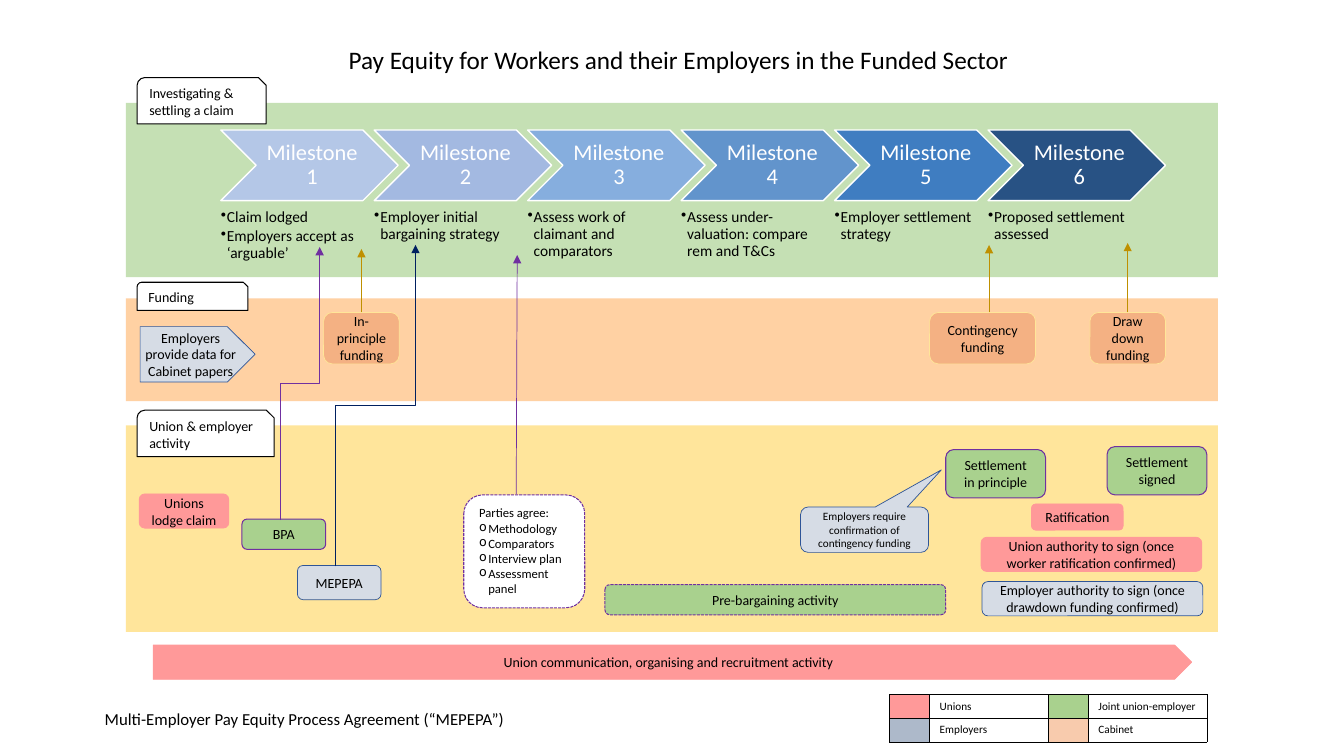
from collections import namedtuple

from lxml import etree
from pptx import Presentation
from pptx.dml.color import RGBColor
from pptx.enum.dml import MSO_LINE
from pptx.enum.shapes import MSO_CONNECTOR, MSO_SHAPE
from pptx.enum.text import MSO_ANCHOR, PP_ALIGN
from pptx.oxml.ns import qn
from pptx.util import Inches, Pt

# Grid: every length is a number of columns or rows, ten to the inch
CELL = Inches(0.1)
Box = namedtuple("Box", "x y w h")

BLACK = RGBColor(0x00, 0x00, 0x00)
WHITE = RGBColor(0xFF, 0xFF, 0xFF)
GREEN_BAND = RGBColor(0xC5, 0xE0, 0xB4)
ORANGE_BAND = RGBColor(0xFF, 0xCC, 0x99)
YELLOW_BAND = RGBColor(0xFF, 0xE5, 0x9B)
PINK = RGBColor(0xFF, 0x99, 0x99)
GREEN = RGBColor(0xA9, 0xD1, 0x8E)
GREY = RGBColor(0xD6, 0xDC, 0xE5)
ORANGE = RGBColor(0xF4, 0xB1, 0x83)
CREAM = RGBColor(0xFF, 0xE6, 0x99)
PURPLE = RGBColor(0x70, 0x30, 0xA0)
BLUE = RGBColor(0x2F, 0x55, 0x97)
NAVY = RGBColor(0x00, 0x20, 0x60)
GOLD = RGBColor(0xBF, 0x90, 0x00)
SLATE = RGBColor(0xAD, 0xB9, 0xCA)
PEACH = RGBColor(0xF8, 0xCB, 0xAD)
MILESTONE_FILLS = [RGBColor.from_string(c) for c in (
    "B4C7E7", "A3B9E1", "86AEDE", "6294CC", "3F7DC1", "285284")]

# Who acts: fill, line colour, line width
UNION = (PINK, PINK, 0.5)
EMPLOYER = (GREY, BLUE, 0.5)
JOINT = (GREEN, PURPLE, 0.75)
CABINET = (ORANGE, CREAM, 0.5)
LABEL = (WHITE, BLACK, 0.75)
PARTIES = (WHITE, PURPLE, 0.75)

ROUND = MSO_SHAPE.ROUNDED_RECTANGLE


def place(box, x, y, w, h):
    return [round(v * CELL) for v in (box.x + x, box.y + y, w, h)]


def write(tf, lines, size, color=BLACK, align=PP_ALIGN.LEFT, margins=(1, 0.5, 1, 0.5)):
    tf.word_wrap = True
    tf.margin_left, tf.margin_top, tf.margin_right, tf.margin_bottom = [
        round(m * CELL) for m in margins]
    tf.text = "\n".join(lines)
    for p in tf.paragraphs:
        p.alignment = align
        for r in p.runs:
            r.font.name, r.font.size, r.font.color.rgb = "Calibri", Pt(size), color


def bullet(p, char, indent):
    pPr = p._p.get_or_add_pPr()
    pPr.set("marL", str(Inches(indent)))
    pPr.set("indent", str(-Inches(indent)))
    etree.SubElement(pPr, qn("a:buChar")).set("char", char)


def add_box(s, box, at, text, style, kind=ROUND, size=10, align=PP_ALIGN.CENTER,
            anchor=MSO_ANCHOR.MIDDLE, **text_options):
    sp = s.shapes.add_shape(kind, *place(box, *at))
    fill, line, width = style
    sp.shadow.inherit = False
    sp.fill.solid()
    sp.fill.fore_color.rgb = fill
    sp.line.color.rgb = line
    sp.line.width = Pt(width)
    write(sp.text_frame, text.split("\n"), size, align=align, **text_options)
    sp.text_frame.vertical_anchor = anchor
    return sp


def add_text(s, box, lines, size, **text_options):
    tf = s.shapes.add_textbox(*place(box, 0, 0, box.w, box.h)).text_frame
    write(tf, lines, size, **text_options)
    return tf


def add_arrow(s, box, start, end, color, source=None):
    """Arrow from start up to end; it bends halfway when they are far apart sideways."""
    (x1, y1), (x2, y2) = start, end
    bent = abs(x2 - x1) > 1
    if bent:
        # The elbow is laid flat around its centre, then turned upright
        cx, cy, half_w, half_h = (x1 + x2) / 2, (y1 + y2) / 2, (y1 - y2) / 2, (x2 - x1) / 2
        x1, y1, x2, y2 = cx + half_w, cy + half_h, cx - half_w, cy - half_h
    kind = MSO_CONNECTOR.ELBOW if bent else MSO_CONNECTOR.STRAIGHT
    c = s.shapes.add_connector(kind, *place(box, x1, y1, 0, 0)[:2], *place(box, x2, y2, 0, 0)[:2])
    if source is not None:
        c.begin_connect(source, 0)
    c.line.color.rgb = color
    c.line.width = Pt(0.5)
    spPr = c._element.spPr
    if bent:
        spPr.find(qn("a:xfrm")).set("rot", "5400000")
    etree.SubElement(spPr.find(qn("a:ln")), qn("a:tailEnd")).set("type", "triangle")
    etree.SubElement(spPr, qn("a:effectLst"))


def add_band(s, box, color, label, label_at):
    band = s.shapes.add_shape(MSO_SHAPE.RECTANGLE, *place(box, 0, 0, box.w, box.h))
    band.shadow.inherit = False
    band.fill.solid()
    band.fill.fore_color.rgb = color
    band.line.fill.background()
    add_box(s, box, label_at, label, LABEL, MSO_SHAPE.SNIP_ROUND_RECTANGLE,
            align=PP_ALIGN.LEFT, anchor=MSO_ANCHOR.TOP)
    return band


def investigating(s, box):
    add_band(s, box, GREEN_BAND, "Investigating & settling a claim", (1.1, -2.5, 12.8, 4.6))
    steps = [["Claim lodged", "Employers accept as ‘arguable’"],
             ["Employer initial bargaining strategy"],
             ["Assess work of claimant and comparators"],
             ["Assess under-valuation: compare rem and T&Cs"],
             ["Employer settlement strategy"],
             ["Proposed settlement assessed"]]
    for i, (fill, step) in enumerate(zip(MILESTONE_FILLS, steps)):
        x = 9.4 + 15.22 * i
        sp = add_box(s, box, (x, 2.7, 17.6, 7), f"Milestone {i + 1}", (fill, WHITE, 1),
                     MSO_SHAPE.CHEVRON, 16, color=WHITE, margins=(0.7, 0.2, 0.2, 0.2))
        sp.text_frame.paragraphs[0].line_spacing = 0.9
        tf = add_text(s, Box(box.x + x, box.y + 10.6, 14.1, 5.4), step, 11, margins=(0, 0, 0, 0))
        for p in tf.paragraphs:
            p.line_spacing, p.space_after = 0.9, Pt(1.65)
            bullet(p, "•", 0.06)


def funding(s, box):
    band = add_band(s, box, ORANGE_BAND, "Funding", (1.1, -1.6, 11, 2.8))
    color = band._element.spPr.find(qn("a:solidFill"))[0]
    etree.SubElement(color, qn("a:alpha")).set("val", "90000")
    add_box(s, box, (1.4, 2.8, 11.4, 5.5), "Employers provide data for Cabinet papers", EMPLOYER,
            MSO_SHAPE.PENTAGON, margins=(0.4, 0.5, 0.4, 0.5))
    # Cabinet decisions: text, left, width, arrow column, arrow tip, joined to the box
    for text, x, w, column, tip, joined in [
            ("In- principle funding", 19.6, 7.5, 23.35, -4.9, True),
            ("Contingency funding", 79.7, 10.5, 85.6, -5.3, False),
            ("Draw down funding", 95.6, 7.5, 99.35, -5.5, True)]:
        sp = add_box(s, box, (x, 1.4, w, 5.1), text, CABINET)
        add_arrow(s, box, (column, 1.4), (column, tip), GOLD, sp if joined else None)


def activity(s, box):
    add_band(s, box, YELLOW_BAND, "Union & employer activity", (1.1, -1.5, 13.6, 4.6))
    for text, style, at in [
            ("Unions lodge claim", UNION, (1.3, 6.8, 8.9, 3.4)),
            ("BPA", JOINT, (11.5, 9.3, 8.3, 3)),
            ("MEPEPA", EMPLOYER, (17, 13.9, 8.3, 3.4)),
            ("Settlement in principle", JOINT, (81.3, 2.4, 9.9, 4.8)),
            ("Settlement signed", JOINT, (97.3, 2.1, 9.9, 4.8)),
            ("Ratification", UNION, (89.8, 7.8, 9.1, 2.6)),
            ("Union authority to sign (once worker ratification confirmed)", UNION,
             (84.8, 11.1, 21.9, 3.4)),
            ("Employer authority to sign (once drawdown funding confirmed)", EMPLOYER,
             (84.9, 15.5, 21.9, 3.4))]:
        add_box(s, box, at, text, style)
    sp = add_box(s, box, (47.5, 15.8, 33.8, 3), "Pre-bargaining activity", JOINT)
    sp.line.dash_style = MSO_LINE.SQUARE_DOT

    # What the parties agree
    sp = add_box(s, box, (33.5, 6.9, 12, 11.2),
                 "Parties agree:\nMethodology\nComparators\nInterview plan\nAssessment panel",
                 PARTIES, size=9, align=PP_ALIGN.LEFT, anchor=MSO_ANCHOR.TOP)
    sp.line.dash_style = MSO_LINE.SQUARE_DOT
    for p in sp.text_frame.paragraphs[1:]:
        bullet(p, "o", 0.09)

    # Callout pointing at the settlement
    sp = add_box(s, box, (66.9, 8.1, 12.7, 4.5),
                 "Employers require confirmation of contingency funding", EMPLOYER,
                 MSO_SHAPE.ROUNDED_RECTANGULAR_CALLOUT, 8)
    sp.adjustments[0], sp.adjustments[1] = 0.6, -1.32

    # Arrows up to the milestones
    for start, end, color in [((38.7, 6.8), (38.8, -16.9), PURPLE),
                              ((20.8, 14), (28.7, -17.9), NAVY),
                              ((15.3, 9.4), (19.2, -17.7), PURPLE)]:
        add_arrow(s, box, start, end, color)


def legend(s, box):
    halves = [[(PINK, "Unions"), (SLATE, "Employers")],
              [(GREEN, "Joint union-employer"), (PEACH, "Cabinet")]]
    half = box.w / 2
    for i, entries in enumerate(halves):
        table = s.shapes.add_table(2, 2, *place(box, i * half, 0, half, box.h)).table
        table.first_row = table.horz_banding = False
        table.columns[0].width, table.columns[1].width = 4 * CELL, round((half - 4) * CELL)
        for row, (swatch, name) in enumerate(entries):
            for col, (fill, text) in enumerate([(swatch, ""), (WHITE, name)]):
                cell = table.cell(row, col)
                write(cell.text_frame, [text], 8)
                cell.text_frame.paragraphs[0]._p.get_or_add_endParaRPr().set("sz", "800")
                tcPr = cell._tc.get_or_add_tcPr()
                for side in ("a:lnL", "a:lnR", "a:lnT", "a:lnB"):
                    ln = etree.SubElement(tcPr, qn(side), w=str(Pt(0.25)))
                    paint = etree.SubElement(ln, qn("a:solidFill"))
                    etree.SubElement(paint, qn("a:srgbClr"), val=str(BLACK))
                cell.fill.solid()
                cell.fill.fore_color.rgb = fill


def main():
    prs = Presentation()
    prs.slide_width, prs.slide_height = Inches(13.33), Inches(7.5)
    s = prs.slides.add_slide(prs.slide_layouts[6])
    add_text(s, Box(29.4, 3.9, 75.8, 4),
             ["Pay Equity for Workers and their Employers in the Funded Sector"], 18,
             align=PP_ALIGN.CENTER)
    investigating(s, Box(12.5, 10.2, 108.3, 17.3))
    funding(s, Box(12.5, 29.6, 108.3, 10.2))
    activity(s, Box(12.5, 42.2, 108.3, 20.5))
    add_box(s, Box(15.2, 64, 103, 3.4), (0, 0, 103, 3.4),
            "Union communication, organising and recruitment activity", UNION, MSO_SHAPE.PENTAGON)
    add_text(s, Box(9.4, 69.8, 41.9, 3),
             ["Multi-Employer Pay Equity Process Agreement (“MEPEPA”)"], 12)
    legend(s, Box(88.2, 68.9, 31.5, 4.7))
    prs.save("out.pptx")


if __name__ == "__main__":
    main()
